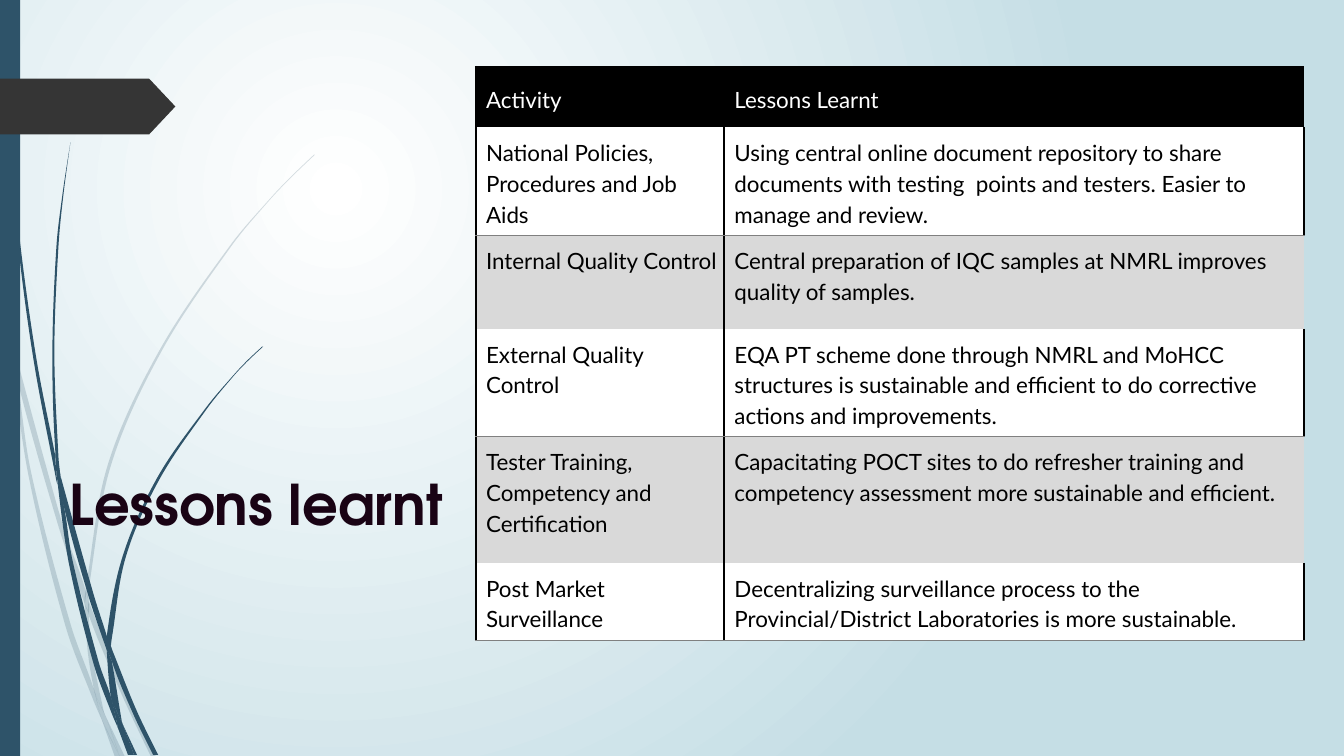
from dataclasses import dataclass
from math import dist

from lxml import etree
from pptx import Presentation
from pptx.dml.color import RGBColor
from pptx.enum.shapes import MSO_SHAPE
from pptx.enum.text import MSO_ANCHOR, MSO_AUTO_SIZE, PP_ALIGN
from pptx.oxml.ns import qn
from pptx.util import Cm, Pt

RECTANGLE, TAG = MSO_SHAPE.RECTANGLE, MSO_SHAPE.PENTAGON
TOP, MIDDLE, BOTTOM = MSO_ANCHOR.TOP, MSO_ANCHOR.MIDDLE, MSO_ANCHOR.BOTTOM
LEFT, NO_AUTOFIT = PP_ALIGN.LEFT, MSO_AUTO_SIZE.NONE
TITLE_ONLY = 5


@dataclass(frozen=True)
class Theme:
    glow: str = "FFFFFF"
    mist: str = "C5DEE5"
    stem: str = "2E5369"
    tag: str = "353535"
    title: str = "190314"
    ink: str = "000000"
    paper: str = "FFFFFF"
    band: str = "D9D9D9"
    title_font: str = "TeX Gyre Adventor"
    body_font: str = "Lato"
    title_size: int = 40
    body_size: int = 16
    frame_line: tuple = ("000000", 1.5)
    row_line: tuple = ("808080", 0.5)


@dataclass(frozen=True)
class Box:
    left: int
    top: int
    width: int
    height: int


THEME = Theme()

# Outlines of the blades of grass, in hundredths of an inch from the top left.
PALE_BLADES = [
    [(11, 350), (9, 322), (0, 282), (0, 299), (10, 344)],
    [(58, 522), (84, 599), (85, 586), (62, 520), (14, 345), (17, 376)],
    [(92, 607), (88, 596), (88, 610), (123, 694), (150, 751), (155, 751), (127, 692)],
    [(119, 751), (124, 751), (105, 711)],
    [(93, 683), (70, 619), (31, 469), (17, 376), (11, 350), (28, 470), (65, 621), (92, 693), (101, 714), (99, 707)],
    [(84, 599), (87, 646), (93, 683), (96, 692), (105, 711), (103, 706), (91, 646), (88, 610), (88, 608)],
    [(88, 584), (110, 462), (160, 349), (229, 245), (268, 198), (290, 175), (312, 154), (312, 153), (289, 175),
     (268, 197), (228, 244), (158, 348), (107, 461), (85, 584), (85, 586), (88, 596)],
    [(101, 714), (114, 751), (119, 751)],
    [(88, 608), (88, 610), (88, 596), (85, 586), (84, 599)],
    [(96, 692), (93, 683), (99, 707), (101, 714), (119, 751), (105, 711)],
]
DARK_BLADES = [
    [(7, 110), (17, 233), (33, 355), (56, 477), (57, 481), (55, 457), (55, 453), (36, 355), (19, 232), (8, 109),
     (5, 48), (4, 0), (3, 0), (4, 48)],
    [(88, 592), (106, 645), (106, 633), (106, 631), (93, 590), (60, 472), (64, 505)],
    [(113, 649), (110, 641), (111, 656), (132, 708), (152, 749), (157, 749), (136, 706)],
    [(110, 691), (98, 657), (72, 556), (64, 505), (57, 477), (68, 557), (93, 659), (111, 708), (117, 722), (116, 717)],
    [(60, 472), (58, 453), (54, 349), (58, 245), (63, 193), (70, 141), (62, 193), (56, 245), (52, 349), (55, 449)],
    [(133, 749), (136, 749), (122, 719)],
    [(57, 477), (64, 505), (60, 472), (55, 449), (55, 453)],
    [(111, 633), (125, 552), (158, 476), (205, 406), (231, 374), (245, 359), (261, 344), (260, 344), (245, 358),
     (231, 373), (204, 405), (156, 474), (122, 551), (106, 631), (110, 641)],
    [(117, 722), (127, 749), (131, 749)],
    [(106, 645), (110, 691), (116, 706), (122, 719), (121, 716), (111, 656), (109, 651)],
    [(106, 645), (109, 651), (111, 656), (110, 641), (106, 631), (106, 633)],
    [(116, 706), (110, 691), (116, 717), (117, 722), (130, 749), (133, 749), (122, 719)],
]

LESSONS = [
    ("Activity", "Lessons Learnt"),
    ("National Policies, Procedures and Job Aids",
     "Using central online document repository to share documents with testing  points and testers. "
     "Easier to manage and review."),
    ("Internal Quality Control", "Central preparation of IQC samples at NMRL improves quality of samples."),
    ("External Quality Control",
     "EQA PT scheme done through NMRL and MoHCC structures is sustainable and efficient to do "
     "corrective actions and improvements."),
    ("Tester Training, Competency and Certification",
     "Capacitating POCT sites to do refresher training and competency assessment more sustainable and efficient."),
    ("Post Market Surveillance",
     "Decentralizing surveillance process to the Provincial/District Laboratories is more sustainable."),
]
COLUMN_WIDTHS = [6.26, 14.61]
ROW_HEIGHTS = [1.53, 2.36, 2.36, 2.36, 3.18, 1.52]


def write(frame, text, *, font, size, color, bold=False, line_spacing=None, space_after=0):
    frame.word_wrap = True
    paragraph = frame.paragraphs[0]
    paragraph.alignment, paragraph.line_spacing = LEFT, line_spacing
    paragraph.space_after = Pt(space_after)
    run = paragraph.add_run()
    run.text = text
    run.font.name, run.font.size, run.font.bold = font, Pt(size), bold
    run.font.color.rgb = RGBColor.from_string(color)


def paint(shape, color, opacity=100):
    shape.shadow.inherit = False
    shape.line.fill.background()
    shape.fill.solid()
    shape.fill.fore_color.rgb = RGBColor.from_string(color)
    if opacity < 100:
        tint = shape.element.find(".//" + qn("a:srgbClr"))
        etree.SubElement(tint, qn("a:alpha"), val=str(opacity * 1000))


def handle(before, point, after, reach):
    """Return the curve handle of a point, which lies on the point itself at a sharp corner."""
    (ax, ay), (bx, by), (cx, cy) = before, point, after
    turn = ((bx - ax) * (cx - bx) + (by - ay) * (cy - by)) / (dist(before, point) * dist(point, after))
    if turn < 0.8:
        return point
    stretch = reach / dist(before, after)
    return bx + (cx - ax) * stretch, by + (cy - ay) * stretch


def add_blade(shapes, box, outline, opacity):
    """Draw a closed outline of cubic curves through the given points."""
    controls = []
    for i, start in enumerate(outline):
        before, end, after = (outline[(i + step) % len(outline)] for step in (-1, 1, 2))
        reach = dist(start, end) / 3
        controls += [handle(before, start, end, reach), handle(start, end, after, -reach), end]
    fineness = 10
    builder = shapes.build_freeform(*(v * fineness for v in outline[0]), scale=Cm(2.54) / (100 * fineness))
    builder.add_line_segments([(x * fineness, y * fineness) for x, y in controls], close=True)
    blade = builder.convert_to_shape(box.left, box.top)
    lines = blade.element.findall(".//" + qn("a:lnTo"))
    for first, second, last in zip(lines[::3], lines[1::3], lines[2::3]):
        curve = etree.Element(qn("a:cubicBezTo"))
        first.addprevious(curve)
        for line in (first, second, last):
            curve.append(line[0])
            line.getparent().remove(line)
    paint(blade, THEME.stem, opacity)


def add_background(slide):
    """Fill the slide with a circular glow centred in its upper left quarter."""
    fill = slide.background.fill
    fill.gradient()
    for stop, color in zip(fill.gradient_stops, (THEME.glow, THEME.mist)):
        stop.color.rgb = RGBColor.from_string(color)
    gradient = slide.element.find(".//" + qn("a:gradFill"))
    gradient.remove(gradient.find(qn("a:lin")))
    circle = etree.SubElement(gradient, qn("a:path"))
    circle.set("path", "circle")
    etree.SubElement(circle, qn("a:fillToRect"), l="50000", t="50000", r="100000", b="100000")


def add_left_ornament(shapes, box):
    for blades, opacity in ((PALE_BLADES, 20), (DARK_BLADES, 100)):
        for outline in blades:
            add_blade(shapes, box, outline, opacity)
    paint(shapes.add_shape(RECTANGLE, box.left, box.top, Cm(0.51), box.height), THEME.stem)
    tag = shapes.add_shape(TAG, box.left, box.top + Cm(1.98), Cm(4.42), Cm(1.41))
    tag.adjustments[0] = 0.47
    paint(tag, THEME.tag)


def place_title(title, box, text):
    title.element.getparent().append(title.element)  # in front of the grass
    title.left, title.top, title.width, title.height = box.left, box.top, box.width, box.height
    title.text_frame.vertical_anchor, title.text_frame.auto_size = BOTTOM, NO_AUTOFIT
    write(title.text_frame, text, font=THEME.title_font, size=THEME.title_size,
          color=THEME.title, bold=True, space_after=8)


def set_borders(cell, edges):
    """Draw the given edges, keyed L, R, T, B as (colour, points); clear the others."""
    for position, side in enumerate("LRTB"):
        color, points = edges.get(side, (None, 0))
        line = etree.Element(qn("a:ln" + side), w=str(Pt(points)))
        fill = etree.SubElement(line, qn("a:solidFill" if color else "a:noFill"))
        if color:
            etree.SubElement(fill, qn("a:srgbClr"), val=color)
        cell._tc.get_or_add_tcPr().insert(position, line)


def cell_style(row, column):
    """Return the fill, text colour and borders of a cell."""
    outer, inner = THEME.frame_line, THEME.row_line
    if row == 0:
        return THEME.ink, THEME.paper, {"T": outer} | ({} if column else {"L": outer})
    if row % 2:
        return THEME.paper, THEME.ink, {"L": outer, "R": outer, "B": inner}
    return THEME.band, THEME.ink, {"L": outer, "T": inner} | ({} if column else {"R": outer})


def add_lessons_table(shapes, box):
    table = shapes.add_table(len(LESSONS), 2, box.left, box.top, box.width, box.height).table
    table.first_row = table.horz_banding = False
    for column, width in zip(table.columns, COLUMN_WIDTHS):
        column.width = Cm(width)
    for row, (texts, height) in enumerate(zip(LESSONS, ROW_HEIGHTS)):
        table.rows[row].height = Cm(height)
        for column, text in enumerate(texts):
            cell = table.cell(row, column)
            background, ink, edges = cell_style(row, column)
            cell.margin_left, cell.margin_right = Cm(0.26), Cm(0.15)
            cell.margin_top, cell.margin_bottom = Cm(0.21), Cm(0.18)
            cell.vertical_anchor = TOP if row else MIDDLE
            cell.fill.solid()
            cell.fill.fore_color.rgb = RGBColor.from_string(background)
            set_borders(cell, edges)
            write(cell.text_frame, text, font=THEME.body_font, size=THEME.body_size, color=ink, line_spacing=1.15)


def main():
    deck = Presentation()
    deck.slide_width, deck.slide_height = Cm(33.87), Cm(19.05)
    slide = deck.slides.add_slide(deck.slide_layouts[TITLE_ONLY])
    add_background(slide)
    add_left_ornament(slide.shapes, Box(0, 0, Cm(8), deck.slide_height))
    place_title(slide.shapes.title, Box(Cm(1.5), Cm(2.69), Cm(10.49), Cm(10.95)), "Lessons learnt")
    add_lessons_table(slide.shapes, Box(Cm(11.99), Cm(1.68), Cm(20.87), Cm(14.35)))
    deck.save("out.pptx")


if __name__ == "__main__":
    main()
